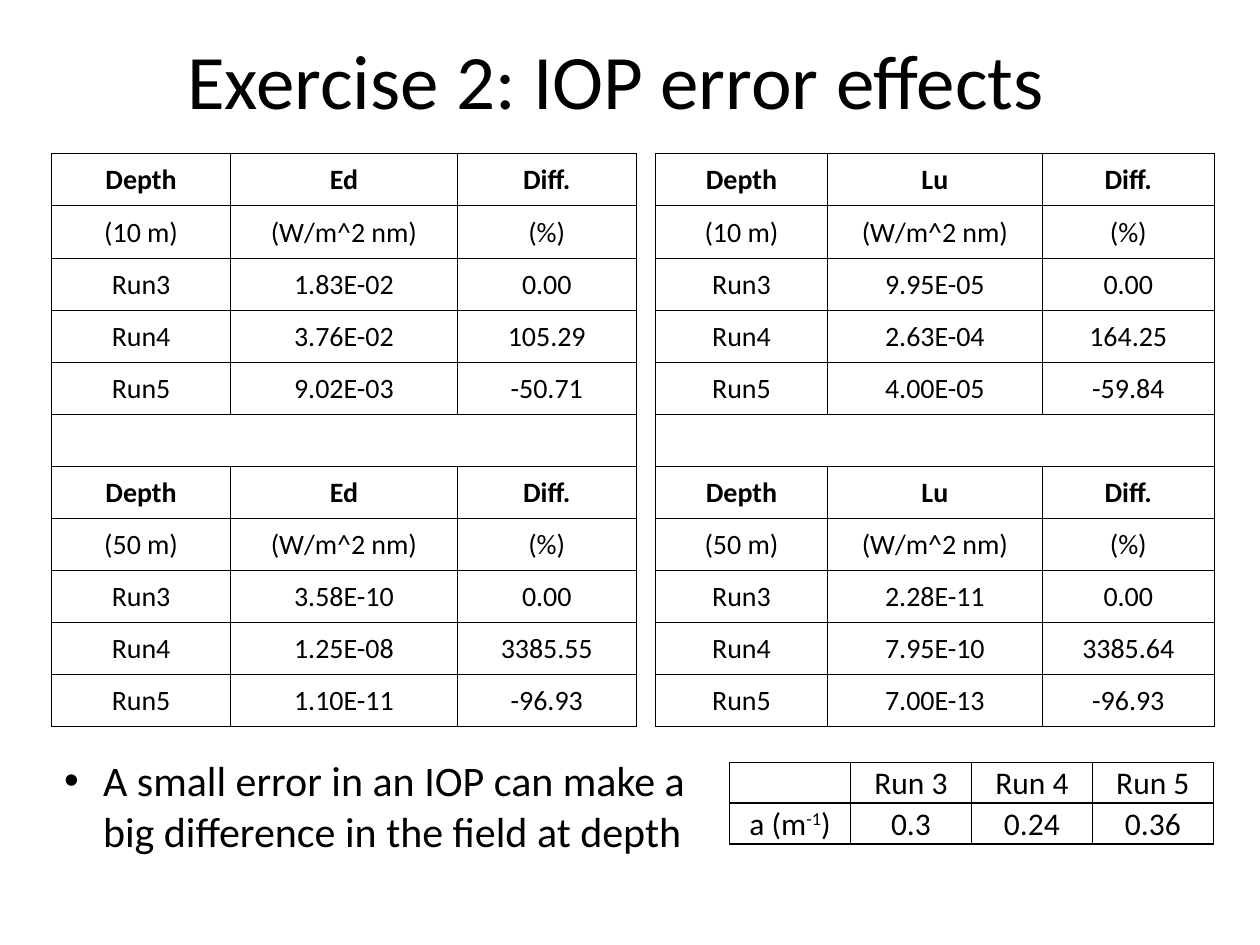
from dataclasses import dataclass

from lxml import etree
from pptx import Presentation
from pptx import util as u
from pptx.dml import color
from pptx.enum import text as t
from pptx.oxml import ns


@dataclass(frozen=True)
class Theme:
    font: str = "Calibri"
    ink: str = "000000"
    title: int = 44
    body: int = 24
    label: int = 18
    data: int = 16


@dataclass(frozen=True)
class Grid:
    left: float
    top: float
    cols: list[float]
    height: float
    rows: list[list[str]]
    size: int
    line: float
    low: bool = False


THEME = Theme()


def put(frame, words: str, *, size: int, bold: bool = False,
        align=t.PP_ALIGN.CENTER, anchor=t.MSO_ANCHOR.MIDDLE):
    frame.word_wrap = True
    frame.vertical_anchor = anchor
    para = frame.paragraphs[0]
    para.alignment = align
    for i, part in enumerate(words.split("^^")):
        run = para.add_run()
        run.text = part
        run.font.name = THEME.font
        run.font.size = u.Pt(size)
        run.font.bold = bold
        run.font.color.rgb = color.RGBColor.from_string(THEME.ink)
        if i % 2:
            run.font._element.set("baseline", "30000")
    return para


def edge(cell, sides: str, width: float) -> None:
    props = cell._tc.get_or_add_tcPr()
    for side in "LRTB":
        line = etree.SubElement(props, ns.qn(f"a:ln{side}"))
        if side in sides:
            line.set("w", str(u.Pt(width)))
            fill = etree.SubElement(line, ns.qn("a:solidFill"))
            etree.SubElement(fill, ns.qn("a:srgbClr"), val=THEME.ink)
        else:
            etree.SubElement(line, ns.qn("a:noFill"))
    cell.fill.background()


def draw(slide, grid: Grid) -> None:
    count, last = len(grid.rows), len(grid.cols) - 1
    table = slide.shapes.add_table(
        count, last + 1, u.Inches(grid.left), u.Inches(grid.top),
        u.Inches(sum(grid.cols)), u.Inches(grid.height)).table
    table.first_row = table.horz_banding = False
    for col, width in zip(table.columns, grid.cols):
        col.width = u.Inches(width)
    for r, row in enumerate(grid.rows):
        table.rows[r].height = u.Inches(grid.height / count)
        for c, words in enumerate(row):
            cell = table.cell(r, c)
            cell.margin_left = cell.margin_right = cell.margin_top = u.Inches(0.01)
            cell.margin_bottom = 0
            low = grid.low and not (r and c == 0)
            cell.vertical_anchor = t.MSO_ANCHOR.BOTTOM if low else t.MSO_ANCHOR.MIDDLE
            if words:
                put(cell.text_frame, words, size=grid.size,
                    bold=row[0] == "Depth", anchor=None)
            sides = "LRTB"
            if not any(row):
                sides = "TB" + "L" * (c == 0) + "R" * (c == last)
            edge(cell, sides, grid.line)


def block(depth: int, name: str, runs: list[tuple[str, str]]) -> list[list[str]]:
    head = [["Depth", name, "Diff."], [f"({depth} m)", "(W/m^2 nm)", "(%)"]]
    return head + [[f"Run{n}", *run] for n, run in enumerate(runs, 3)]


def field(name: str, near: list[tuple[str, str]],
          deep: list[tuple[str, str]]) -> list[list[str]]:
    return block(10, name, near) + [[""] * 3] + block(50, name, deep)


def main() -> None:
    deck = Presentation()
    deck.slide_width, deck.slide_height = u.Inches(10), u.Inches(7.5)
    slide = deck.slides.add_slide(deck.slide_layouts[5])

    title = slide.shapes.title
    title.left, title.top = u.Inches(0.5), 0
    title.width, title.height = u.Inches(9), u.Inches(1.25)
    title.text_frame.margin_right = u.Inches(0.32)
    put(title.text_frame, "Exercise 2: IOP error effects", size=THEME.title)

    ed = field("Ed",
               [("1.83E-02", "0.00"), ("3.76E-02", "105.29"), ("9.02E-03", "-50.71")],
               [("3.58E-10", "0.00"), ("1.25E-08", "3385.55"), ("1.10E-11", "-96.93")])
    lu = field("Lu",
               [("9.95E-05", "0.00"), ("2.63E-04", "164.25"), ("4.00E-05", "-59.84")],
               [("2.28E-11", "0.00"), ("7.95E-10", "3385.64"), ("7.00E-13", "-96.93")])
    runs = [["", "Run 3", "Run 4", "Run 5"],
            ["a (m^^-1^^)", "0.3", "0.24", "0.36"]]
    for grid in (
        Grid(0.41, 1.22, [1.42, 1.8, 1.42], 4.55, ed, THEME.data, 0.5),
        Grid(5.2, 1.22, [1.37, 1.7, 1.37], 4.55, lu, THEME.data, 0.5),
        Grid(5.79, 6.05, [0.96] * 4, 0.65, runs, THEME.label, 1, low=True),
    ):
        draw(slide, grid)

    note = slide.shapes.add_textbox(
        u.Inches(0.41), u.Inches(5.94), u.Inches(5.38), u.Inches(0.91))
    para = put(note.text_frame,
               "A small error in an IOP can make a big difference in the field at depth",
               size=THEME.body, align=t.PP_ALIGN.LEFT, anchor=t.MSO_ANCHOR.TOP)
    props = para._p.get_or_add_pPr()
    props.set("marL", str(u.Inches(0.31)))
    props.set("indent", str(u.Inches(-0.31)))
    etree.SubElement(props, ns.qn("a:buFont"), typeface="Arial")
    etree.SubElement(props, ns.qn("a:buChar"), char="•")

    deck.save("out.pptx")


if __name__ == "__main__":
    main()
